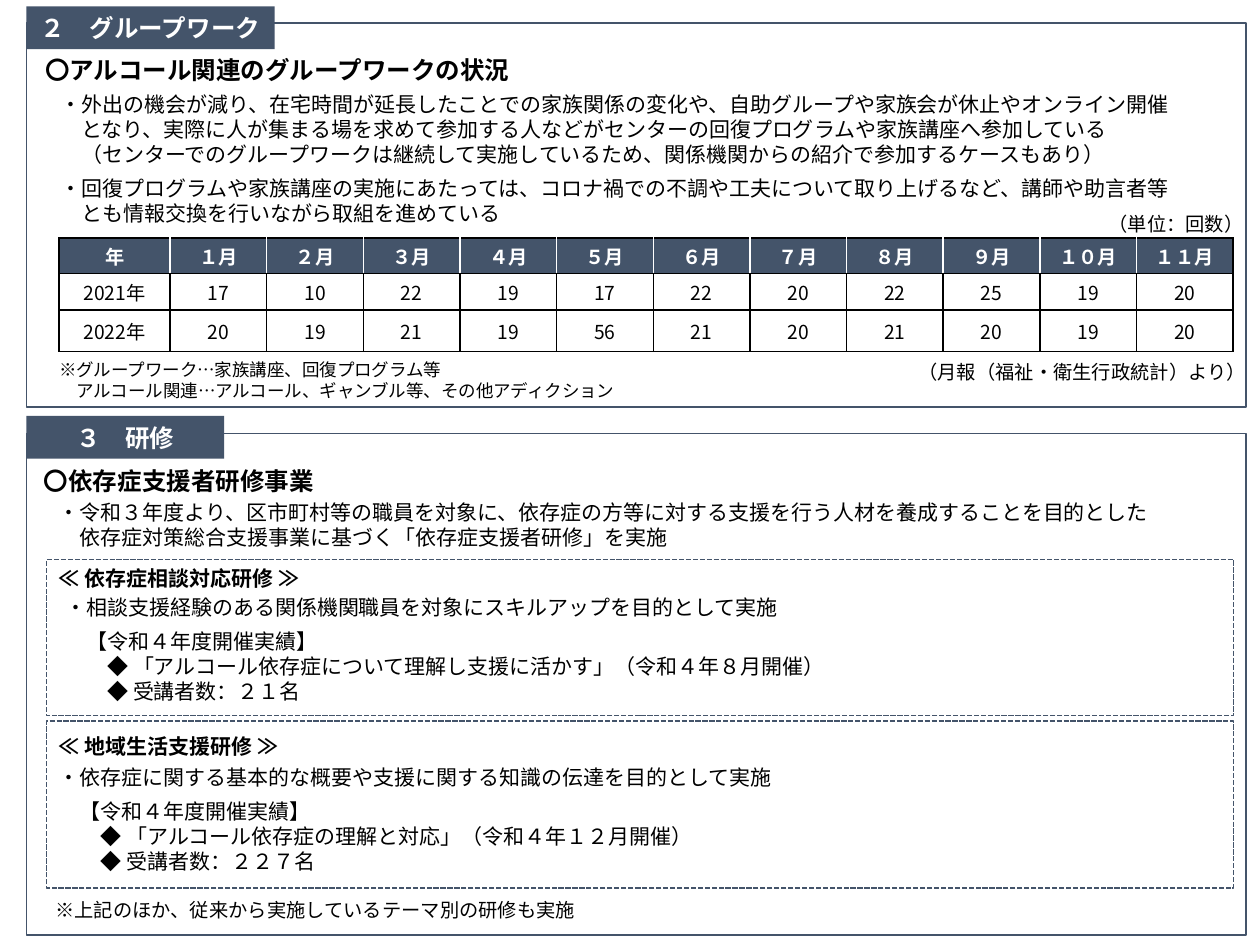
"""Build the slide on group work and training."""
from lxml import etree
from pptx import Presentation
from pptx.dml import color
from pptx.enum import dml, shapes, text
from pptx.oxml import ns
from pptx.util import Inches, Pt

FACE = "Noto Sans CJK JP"
NAVY, BLACK, WHITE = "44546A", "000000", "FFFFFF"


def paint(form, tint):
    form.solid()
    form.fore_color.rgb = color.RGBColor.from_string(tint)


def write(frame, lines, size, tint=BLACK, bold=False, mid=False):
    frame.word_wrap = True
    for num, (level, gap, words) in enumerate(lines):
        para = frame.paragraphs[0] if num == 0 else frame.add_paragraph()
        if mid:
            para.alignment = text.PP_ALIGN.CENTER
        else:
            para.alignment = text.PP_ALIGN.LEFT
            para.line_spacing = Pt(round(size * 1.19, 1))
            para.space_before = Pt(gap)
        if level:
            para._p.get_or_add_pPr().set("marL", str(Pt(size * level)))
        run = para.add_run()
        run.text = words
        style = {"name": FACE, "size": Pt(size), "bold": bold}
        for key, val in style.items():
            setattr(run.font, key, val)
        paint(run.font.fill, tint)
        east = etree.SubElement(run._r.get_or_add_rPr(), ns.qn("a:ea"))
        east.set("typeface", FACE)


deck = Presentation()
deck.slide_width, deck.slide_height = Inches(10), Inches(7.5)
slide = deck.slides.add_slide(deck.slide_layouts[6])

frames = [
    (0.21, 0.18, 9.68, 3.05, False),
    (0.21, 3.44, 9.68, 3.98, False),
    (0.37, 4.44, 9.42, 1.24, True),
    (0.37, 5.72, 9.42, 1.33, True),
]
for *spot, dash in frames:
    box = slide.shapes.add_shape(shapes.MSO_SHAPE.RECTANGLE, *map(Inches, spot))
    box.shadow.inherit = False
    box.fill.background()
    paint(box.line.fill, NAVY)
    box.line.width = Pt(1)
    if dash:
        box.line.dash_style = dml.MSO_LINE.SQUARE_DOT

tabs = [(0.05, 1.97, "２　グループワーク"), (3.3, 1.57, "３　研修")]
for top, wide, words in tabs:
    tab = slide.shapes.add_shape(
        shapes.MSO_SHAPE.ROUNDED_RECTANGLE,
        Inches(0.21), Inches(top), Inches(wide), Inches(0.34))
    tab.adjustments[0] = 0
    tab.shadow.inherit = False
    paint(tab.fill, NAVY)
    tab.line.fill.background()
    tab.text_frame.vertical_anchor = text.MSO_ANCHOR.MIDDLE
    write(tab.text_frame, [(0, 0, words)], 14, WHITE, True, True)

result = "【令和４年度開催実績】"
notes = [
    (0.26, 0.38, 5.28, 0.4, 14, True, [(0, 0, "〇アルコール関連のグループワークの状況")]),
    (0.38, 0.67, 9.62, 1.19, 12, False, [
        (0, 0, "・外出の機会が減り、在宅時間が延長したことでの家族関係の変化や、自助グループや家族会が休止やオンライン開催"),
        (1, 0, "となり、実際に人が集まる場を求めて参加する人などがセンターの回復プログラムや家族講座へ参加している"),
        (1, 0, "（センターでのグループワークは継続して実施しているため、関係機関からの紹介で参加するケースもあり）"),
        (0, 5, "・回復プログラムや家族講座の実施にあたっては、コロナ禍での不調や工夫について取り上げるなど、講師や助言者等"),
        (1, 0, "とも情報交換を行いながら取組を進めている")]),
    (8.7, 1.63, 1.3, 0.4, 11, False, [(0, 0, "（単位：回数）")]),
    (7.19, 2.8, 2.81, 0.4, 11, False, [(0, 0, "（月報（福祉・衛生行政統計）より）")]),
    (0.37, 2.79, 5.11, 0.37, 10, False, [
        (0, 0, "※グループワーク…家族講座、回復プログラム等"),
        (1, 0, "アルコール関連…アルコール、ギャンブル等、その他アディクション")]),
    (0.25, 3.64, 5.28, 0.4, 14, True, [(0, 0, "〇依存症支援者研修事業")]),
    (0.37, 3.91, 9.63, 0.57, 12, False, [
        (0, 0, "・令和３年度より、区市町村等の職員を対象に、依存症の方等に対する支援を行う人材を養成することを目的とした"),
        (1, 0, "依存症対策総合支援事業に基づく「依存症支援者研修」を実施")]),
    (0.37, 4.43, 2.53, 0.37, 12, True, [(0, 0, "≪ 依存症相談対応研修 ≫")]),
    (0.42, 4.66, 9.58, 1.1, 12, False, [
        (0, 0, "・相談支援経験のある関係機関職員を対象にスキルアップを目的として実施"),
        (1, 5, result),
        (2, 0, "◆ 「アルコール依存症について理解し支援に活かす」（令和４年８月開催）"),
        (2, 0, "◆ 受講者数：２１名")]),
    (0.37, 5.76, 2.53, 0.37, 12, True, [(0, 0, "≪ 地域生活支援研修 ≫")]),
    (0.37, 6.01, 9.63, 0.99, 12, False, [
        (0, 0, "・依存症に関する基本的な概要や支援に関する知識の伝達を目的として実施"),
        (1, 5, result),
        (2, 0, "◆ 「アルコール依存症の理解と対応」（令和４年１２月開催）"),
        (2, 0, "◆ 受講者数：２２７名")]),
    (0.34, 7.07, 5.83, 0.36, 11, False, [(0, 0, "※上記のほか、従来から実施しているテーマ別の研修も実施")]),
]
for *spot, size, bold, lines in notes:
    note = slide.shapes.add_textbox(*map(Inches, spot)).text_frame
    note.margin_top, note.margin_right = Inches(0.06), 0
    write(note, lines, size, bold=bold)

months = "１ ２ ３ ４ ５ ６ ７ ８ ９ １０ １１".split()
rows = [
    ["年"] + [f"{month}月" for month in months],
    ["2021年", 17, 10, 22, 19, 17, 22, 20, 22, 25, 19, 20],
    ["2022年", 20, 19, 21, 19, 56, 21, 20, 21, 20, 19, 20],
]
last = len(months)
table = slide.shapes.add_table(
    len(rows), last + 1, Inches(0.47), Inches(1.89), Inches(9.32), Inches(0.9)).table
table.horz_banding = table.first_row = False
for col, part in enumerate(table.columns):
    part.width = Inches(0.88) if col == 0 else Inches((9.32 - 0.88) / last)
pads = {"margin_left": Inches(0.01), "margin_right": Inches(0.01),
        "margin_top": Inches(0.01), "margin_bottom": 0,
        "vertical_anchor": text.MSO_ANCHOR.MIDDLE}
for row, (tall, vals) in enumerate(zip((0.28, 0.29, 0.33), rows)):
    table.rows[row].height = Inches(tall)
    head = row == 0
    for col, val in enumerate(vals):
        cell = table.cell(row, col)
        for key, pad in pads.items():
            setattr(cell, key, pad)
        write(cell.text_frame, [(0, 0, str(val))], 11,
              WHITE if head else BLACK, head, True)
        props = cell._tc.get_or_add_tcPr()
        for side in "LRTB":
            inner = side == "L" and col > 0 or side == "R" and col < last
            edge = etree.SubElement(props, ns.qn(f"a:ln{side}"), w=str(Pt(1)))
            fill = etree.SubElement(edge, ns.qn("a:solidFill"))
            etree.SubElement(fill, ns.qn("a:srgbClr"),
                             val=WHITE if head and inner else BLACK)
        if head:
            paint(cell.fill, NAVY)
        else:
            cell.fill.background()

deck.save("out.pptx")
